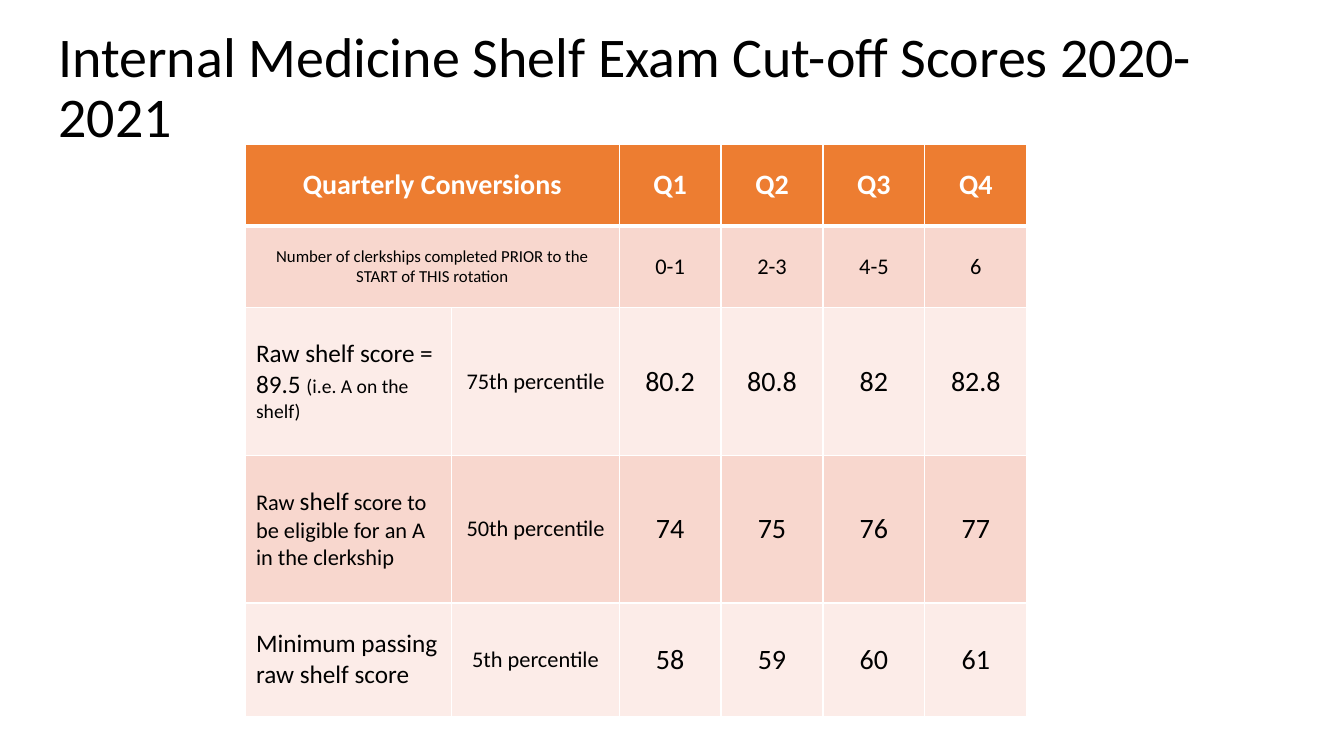
from dataclasses import dataclass

from lxml import etree
from pptx import Presentation
from pptx.dml.color import RGBColor
from pptx.enum.text import MSO_ANCHOR, MSO_AUTO_SIZE, PP_ALIGN
from pptx.oxml.ns import qn
from pptx.util import Pt

LEFT, CENTER = PP_ALIGN.LEFT, PP_ALIGN.CENTER
MIDDLE = MSO_ANCHOR.MIDDLE
NO_AUTOFIT = MSO_AUTO_SIZE.NONE
TITLE_ONLY = 5


@dataclass(frozen=True)
class Theme:
    font: str = "Calibri"
    black: str = "000000"
    white: str = "FFFFFF"
    header: str = "ED7D31"
    dark_band: str = "F8D7CE"
    light_band: str = "FCECE8"
    title: int = 40
    score: int = 20
    large: int = 18
    body: int = 16
    small: int = 14
    note: int = 12


THEME = Theme()


@dataclass(frozen=True)
class Run:
    text: str
    size: int


@dataclass(frozen=True)
class ScoreRow:
    height: float
    label: list[Run]
    percentile: str  # empty when the label spans both columns
    scores: list[str]
    score_size: int = THEME.score


SCORE_ROWS = [
    ScoreRow(58.3, [Run("Quarterly Conversions", THEME.score)], "", ["Q1", "Q2", "Q3", "Q4"]),
    ScoreRow(58.3, [Run("Number of clerkships completed PRIOR to the START of THIS rotation",
                        THEME.note)], "", ["0-1", "2-3", "4-5", "6"], THEME.body),
    ScoreRow(105.5, [Run("Raw shelf score = 89.5 ", THEME.large),
                     Run("(i.e. A on the shelf)", THEME.small)],
             "75th percentile", ["80.2", "80.8", "82", "82.8"]),
    ScoreRow(105.5, [Run("Raw ", THEME.body), Run("shelf", THEME.large),
                     Run(" score to be eligible for an A in the clerkship", THEME.body)],
             "50th percentile", ["74", "75", "76", "77"]),
    ScoreRow(81, [Run("Minimum passing raw shelf score", THEME.large)],
             "5th percentile", ["58", "59", "60", "61"]),
]
COLUMN_WIDTHS = [147.5, 119.5] + [72.8] * 4


def write_text(frame, runs: list[Run], *, color: str = THEME.black, bold: bool = False,
               align=CENTER, line_spacing: float = 1.0) -> None:
    paragraph = frame.paragraphs[0]
    paragraph.alignment = align
    paragraph.line_spacing = line_spacing
    for part in runs:
        run = paragraph.add_run()
        run.text = part.text
        run.font.name = THEME.font
        run.font.size = Pt(part.size)
        run.font.bold = bold
        run.font.color.rgb = RGBColor.from_string(color)


def format_cell(cell, fill: str, top: float, bottom: float) -> None:
    properties = cell._tc.get_or_add_tcPr()
    for side, width in (("L", 1), ("R", 1), ("T", top), ("B", bottom)):
        border = etree.SubElement(properties, qn(f"a:ln{side}"), w=str(Pt(width)))
        solid = etree.SubElement(border, qn("a:solidFill"))
        etree.SubElement(solid, qn("a:srgbClr"), val=THEME.white)
    cell.fill.solid()
    cell.fill.fore_color.rgb = RGBColor.from_string(fill)
    cell.vertical_anchor = MIDDLE
    cell.margin_left = cell.margin_right = Pt(7.6)
    cell.margin_top = cell.margin_bottom = Pt(4)


def add_title(slide, text: str) -> None:
    title = slide.shapes.title
    title.left, title.top, title.width, title.height = Pt(34.6), Pt(11.5), Pt(904.3), Pt(104.4)
    title.text_frame.vertical_anchor = MIDDLE
    title.text_frame.auto_size = NO_AUTOFIT
    title.text_frame.word_wrap = True
    write_text(title.text_frame, [Run(text, THEME.title)], align=LEFT, line_spacing=0.9)


def add_score_table(slide) -> None:
    table = slide.shapes.add_table(
        len(SCORE_ROWS), len(COLUMN_WIDTHS), Pt(175.3), Pt(103.2),
        Pt(sum(COLUMN_WIDTHS)), Pt(sum(row.height for row in SCORE_ROWS))).table
    for column, width in zip(table.columns, COLUMN_WIDTHS):
        column.width = Pt(width)

    for index, row in enumerate(SCORE_ROWS):
        table.rows[index].height = Pt(row.height)
        is_header = index == 0
        band = THEME.dark_band if index % 2 else THEME.light_band
        for column in range(len(COLUMN_WIDTHS)):
            format_cell(table.cell(index, column), THEME.header if is_header else band,
                        top=3 if index == 1 else 1, bottom=3 if is_header else 1)

        # Label and percentile, or one label across both columns
        color = THEME.white if is_header else THEME.black
        label = table.cell(index, 0)
        write_text(label.text_frame, row.label, color=color, bold=is_header,
                   align=LEFT if row.percentile else CENTER)
        if row.percentile:
            write_text(table.cell(index, 1).text_frame, [Run(row.percentile, THEME.body)])
        else:
            label.merge(table.cell(index, 1))

        # Quarterly scores
        for column, score in enumerate(row.scores, start=2):
            write_text(table.cell(index, column).text_frame, [Run(score, row.score_size)],
                       color=color, bold=is_header)


def main() -> None:
    deck = Presentation()
    deck.slide_width, deck.slide_height = Pt(960), Pt(540)
    slide = deck.slides.add_slide(deck.slide_layouts[TITLE_ONLY])
    add_title(slide, "Internal Medicine Shelf Exam Cut-off Scores 2020-2021")
    add_score_table(slide)
    deck.save("out.pptx")


if __name__ == "__main__":
    main()
